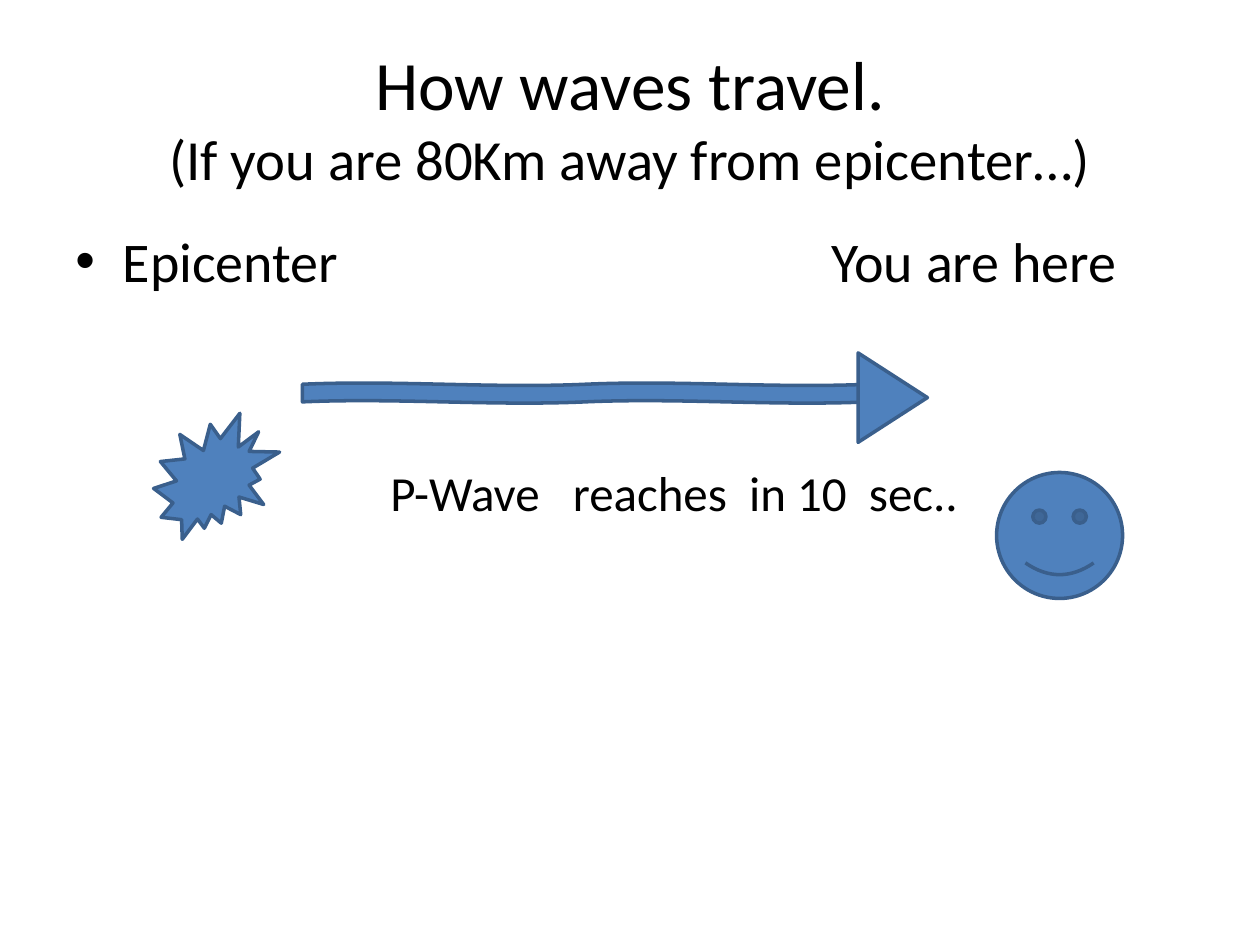
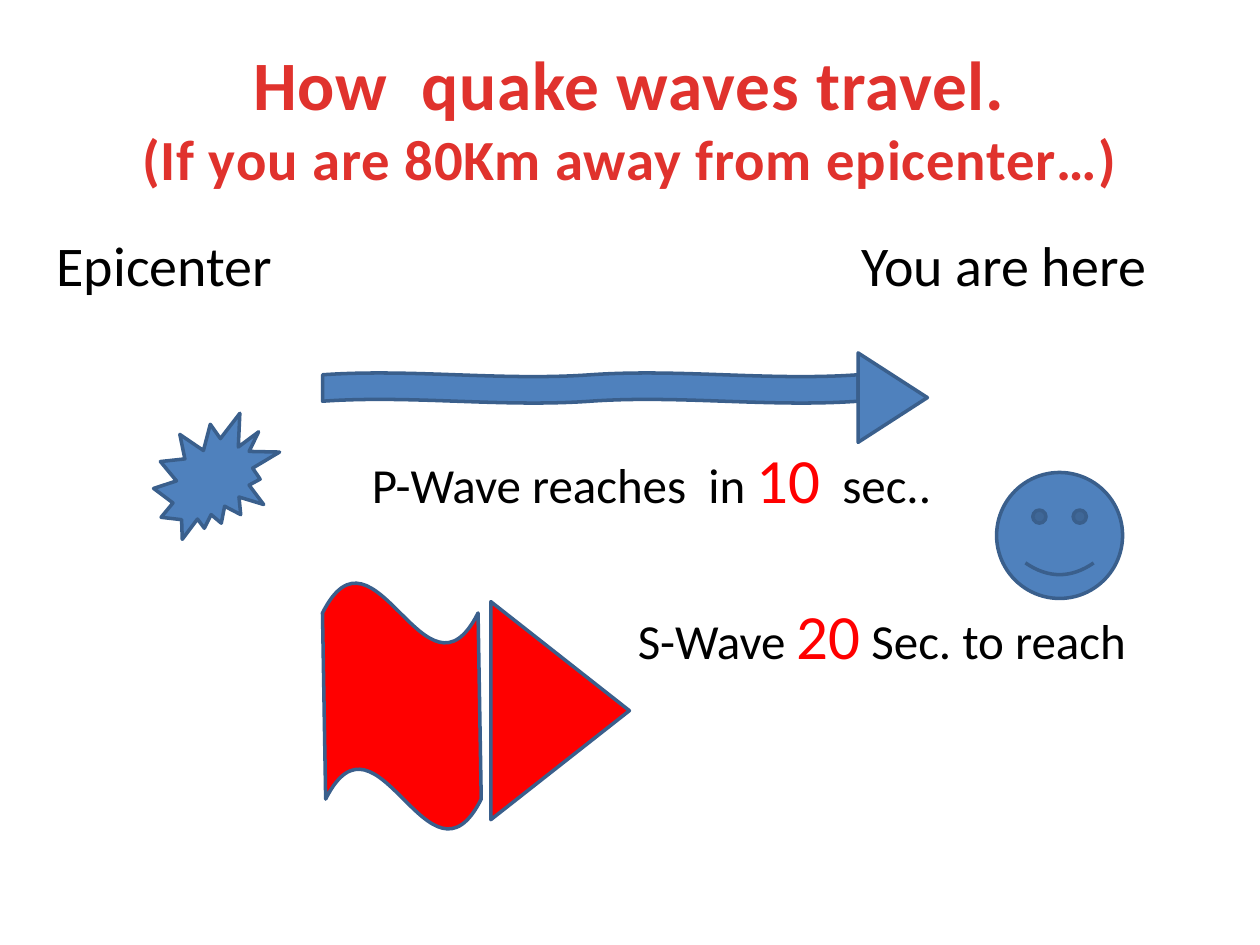
from lxml import etree
from pptx import Presentation
from pptx.dml.color import RGBColor
from pptx.enum import shapes, text
from pptx.oxml import ns
from pptx.util import Pt

BLACK = RGBColor(0x00, 0x00, 0x00)
BLUE = RGBColor(0x4F, 0x81, 0xBD)
OUTLINE = RGBColor(0x3A, 0x5F, 0x8C)
RED = RGBColor(0xFF, 0x00, 0x00)
TITLE_RED = RGBColor(0xE0, 0x32, 0x2D)
FONT = "Calibri"
SUBTITLE = "(If you are 80Km away from epicenter…)"
PRESET = shapes.MSO_SHAPE


def add_text(slide, box, pieces, bold=False):
    left, top, width, height = box
    shape = slide.shapes.add_textbox(Pt(left), Pt(top), Pt(width), Pt(height))
    shape.text_frame.word_wrap = True
    paragraph = shape.text_frame.paragraphs[0]
    for words, size, color in pieces:
        if words == "\v":
            paragraph.add_line_break()
            continue
        run = paragraph.add_run()
        run.text = words
        run.font.name = FONT
        run.font.size = Pt(size)
        run.font.bold = bold
        run.font.color.rgb = color
    return shape


def add_figure(slide, preset, box, fill=BLUE, rotation=0):
    left, top, width, height = box
    shape = slide.shapes.add_shape(preset, Pt(left), Pt(top), Pt(width), Pt(height))
    shape.shadow.inherit = False
    shape.fill.solid()
    shape.fill.fore_color.rgb = fill
    shape.line.color.rgb = OUTLINE
    shape.line.width = Pt(2)
    shape.rotation = rotation
    return shape


presentation = Presentation()
presentation.slide_width = Pt(720)
presentation.slide_height = Pt(540)

scenes = [
    {
        "title": "How waves travel.", "color": BLACK, "bold": False,
        "epicenter": (36, 126), "here": (468, 126),
        "shaft": (172.8, 218.9, 323.3, 11.5),
        "captions": [(216, 261, [("P-Wave   reaches  in 10  sec..", 28, BLACK)])],
    },
    {
        "title": "How  quake waves travel.", "color": TITLE_RED, "bold": True,
        "epicenter": (25.2, 128), "here": (485, 128),
        "shaft": (184.3, 213.1, 306, 17.3),
        "captions": [
            (205.4, 248, [("P-Wave reaches  in ", 28, BLACK), ("10", 36, RED),
                          ("  sec..", 28, BLACK)]),
            (357.4, 337.5, [("S-Wave ", 28, BLACK), ("20", 36, RED),
                            (" Sec. to reach", 28, BLACK)]),
        ],
    },
]

slides = []
for scene in scenes:
    slide = presentation.slides.add_slide(presentation.slide_layouts[6])
    slides.append(slide)

    title = add_text(slide, (36, 21.6, 648, 90),
                     [(scene["title"], 39.6, scene["color"]), ("\v", 0, None),
                      (SUBTITLE, 32.4, scene["color"])], scene["bold"])
    title.text_frame.vertical_anchor = text.MSO_ANCHOR.MIDDLE
    paragraph = title.text_frame.paragraphs[0]
    paragraph.alignment = text.PP_ALIGN.CENTER
    if scene["bold"]:
        for run in paragraph.runs:
            run.font._element.set("spc", "50")

    epicenter = add_text(slide, (*scene["epicenter"], 220, 46), [("Epicenter", 32, BLACK)])
    add_text(slide, (*scene["here"], 200, 46), [("You are here", 32, BLACK)])
    for left, top, pieces in scene["captions"]:
        add_text(slide, (left, top, 350, 51), pieces)

    add_figure(slide, PRESET.EXPLOSION2, (87.8, 236.2, 72, 72))
    add_figure(slide, PRESET.DOUBLE_WAVE, scene["shaft"])
    add_figure(slide, PRESET.FLOWCHART_EXTRACT, (484.6, 207.4, 51.1, 39.6), rotation=90)
    add_figure(slide, PRESET.SMILEY_FACE, (569.5, 270, 72, 72))

    if not scene["bold"]:
        properties = epicenter.text_frame.paragraphs[0]._p.get_or_add_pPr()
        properties.set("marL", str(Pt(27)))
        properties.set("indent", str(Pt(-27)))
        etree.SubElement(properties, ns.qn("a:buFont")).set("typeface", "Arial")
        etree.SubElement(properties, ns.qn("a:buChar")).set("char", "•")

s_wave = add_figure(slides[1], PRESET.WAVE, (184.3, 332.6, 90.7, 141.8), RED)
s_wave.adjustments[1] = 0.01
add_figure(slides[1], PRESET.FLOWCHART_MERGE, (257.8, 366.5, 124.6, 79.2), RED, 270)

presentation.save("out.pptx")
